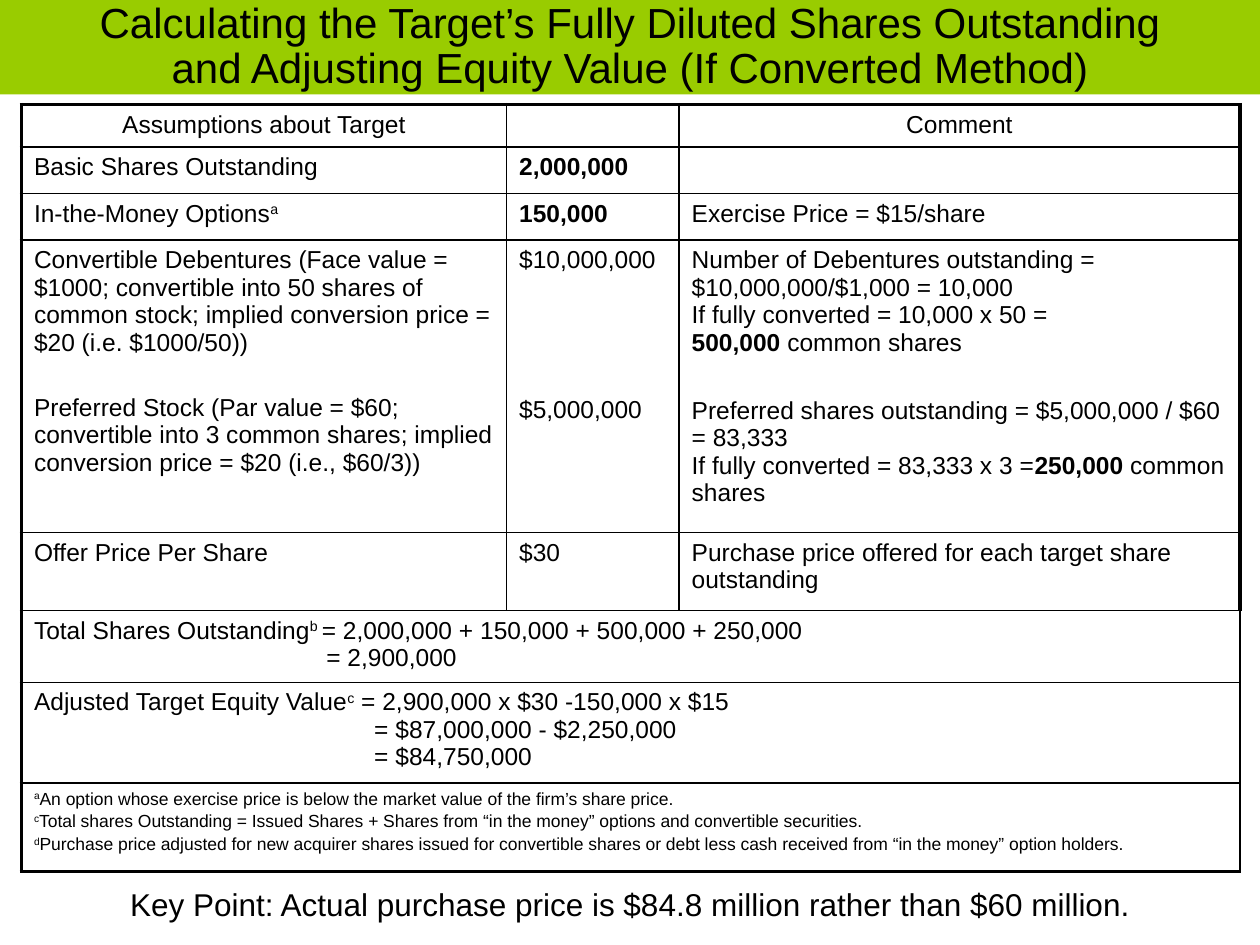
from lxml import etree
from pptx import Presentation
from pptx.dml.color import RGBColor
from pptx.enum.text import MSO_ANCHOR, MSO_AUTO_SIZE, PP_ALIGN
from pptx.oxml.ns import qn
from pptx.util import Inches, Pt

LEFT, CENTER = PP_ALIGN.LEFT, PP_ALIGN.CENTER
MIDDLE, NO_FIT = MSO_ANCHOR.MIDDLE, MSO_AUTO_SIZE.NONE
TITLE_ONLY = 5
COLORS = {"band": "99CC00", "ink": "000000"}
FONT = "Arial"
SIZES = {"title": 24, "key": 18, "body": 14, "note": 10}
THIN, THICK = 1, 2.25
COLUMNS = [3.85, 1.37, 4.45]
ROWS = [0.33, 0.37, 0.37, 2.32, 0.62, 0.57, 0.8, 0.7]


def bold(text):
    return text, {"bold": True}


def raised(text):
    return text, {"baseline": 30000}


def line(*spans, **settings):
    """Describe one paragraph: its spans and its settings."""
    return spans, settings


HEADINGS = [[line(text, alignment=CENTER)] for text in ("Assumptions about Target", "", "Comment")]
ASSUMPTIONS = [
    HEADINGS,
    [[line("Basic Shares Outstanding")], [line(bold("2,000,000"))], [line("")]],
    [[line("In-the-Money Options", raised("a"))], [line(bold("150,000"))],
     [line("Exercise Price = $15/share")]],
    [[line("Convertible Debentures (Face value = $1000; convertible into 50 shares of "
           "common stock; implied conversion price = $20 (i.e. $1000/50))"),
      line("Preferred Stock (Par value = $60; convertible into 3 common shares; implied "
           "conversion price = $20 (i.e., $60/3))", space_before=Pt(21.4))],
     [line("$10,000,000"), line("$5,000,000", space_before=Pt(70))],
     [line("Number of Debentures outstanding = $10,000,000/$1,000 = 10,000"),
      line("If fully converted = 10,000 x 50 ="),
      line(bold("500,000"), " common shares"),
      line("Preferred shares outstanding = $5,000,000 / $60 = 83,333", space_before=Pt(23)),
      line("If fully converted = 83,333 x 3 =", bold("250,000"), " common shares")]],
    [[line("Offer Price Per Share")], [line("$30")],
     [line("Purchase price offered for each target share outstanding")]],
]
RESULTS = [
    [line("Total Shares Outstanding", raised("b "), "= 2,000,000 + 150,000 + 500,000 + 250,000"),
     line("= 2,900,000", indent=2.32)],
    [line("Adjusted Target Equity Value", raised("c"), " = 2,900,000 x $30 -150,000 x $15"),
     line("= $87,000,000 - $2,250,000", indent=2.7),
     line("= $84,750,000", indent=2.7)],
]
NOTES = [line(raised(mark), text, space_before=Pt(1.8)) for mark, text in (
    ("a", "An option whose exercise price is below the market value of the firm’s share price."),
    ("c", "Total shares Outstanding = Issued Shares + Shares from “in the money” options and "
          "convertible securities."),
    ("d", "Purchase price adjusted for new acquirer shares issued for convertible shares or debt "
          "less cash received from “in the money” option holders."),
)]


class Page:
    """Holds the style and the current slide; places are shares of the slide's size."""

    def __init__(self, deck):
        self.deck = deck
        self.slide = deck.slides.add_slide(deck.slide_layouts[TITLE_ONLY])

    def place(self, left, top, width, height):
        across, down = self.deck.slide_width, self.deck.slide_height
        return [int(share * size) for share, size in
                zip((left, top, width, height), (across, down, across, down))]

    def add_lines(self, frame, lines, size):
        frame.word_wrap = True
        for index, (spans, settings) in enumerate(lines):
            para = frame.paragraphs[0] if index == 0 else frame.add_paragraph()
            values = {"alignment": LEFT, "space_before": Pt(0), **settings}
            indent = values.pop("indent", 0)
            for name, value in values.items():
                setattr(para, name, value)
            if indent:
                para._p.get_or_add_pPr().set("marL", str(Inches(indent)))
            for span in spans:
                text, look = span if isinstance(span, tuple) else (span, {})
                if text:
                    self.add_span(para, text, size, **look)
                else:
                    end = etree.SubElement(para._p, qn("a:endParaRPr"))
                    end.set("sz", str(size * 100))

    def add_span(self, para, text, size, bold=False, baseline=0):
        span = para.add_run()
        span.text = text
        style = {"name": FONT, "size": Pt(size), "bold": bold}
        for name, value in style.items():
            setattr(span.font, name, value)
        span.font.color.rgb = RGBColor.from_string(COLORS["ink"])
        if baseline:
            span._r.get_or_add_rPr().set("baseline", str(baseline))

    def title(self, lines, place):
        box = self.slide.shapes.title
        box.left, box.top, box.width, box.height = self.place(*place)
        box.fill.solid()
        box.fill.fore_color.rgb = RGBColor.from_string(COLORS["band"])
        frame = box.text_frame
        frame.auto_size, frame.vertical_anchor = NO_FIT, MIDDLE
        self.add_lines(frame, lines, SIZES["title"])

    def text(self, lines, place, size):
        box = self.slide.shapes.add_textbox(*self.place(*place))
        self.add_lines(box.text_frame, lines, size)

    def table(self, left, top, columns, rows):
        """Add a plain table with a thick frame and thin inner lines."""
        table = self.slide.shapes.add_table(
            len(rows), len(columns), Inches(left), Inches(top),
            Inches(sum(columns)), Inches(sum(rows))).table
        table.first_row = table.horz_banding = False
        for column, width in zip(table.columns, columns):
            column.width = Inches(width)
        for row, height in zip(table.rows, rows):
            row.height = Inches(height)
        for r in range(len(rows)):
            for c in range(len(columns)):
                cell = table.cell(r, c)
                cell.fill.background()
                self.border(cell, {"lnL": c == 0, "lnR": c == len(columns) - 1,
                                   "lnT": r == 0, "lnB": r == len(rows) - 1})
        return table

    def border(self, cell, sides):
        properties = cell._tc.get_or_add_tcPr()
        for index, (side, outer) in enumerate(sides.items()):
            edge = etree.Element(qn(f"a:{side}"), w=str(Pt(THICK if outer else THIN)))
            fill = etree.SubElement(edge, qn("a:solidFill"))
            etree.SubElement(fill, qn("a:srgbClr"), val=COLORS["ink"])
            properties.insert(index, edge)


def main():
    deck = Presentation()
    deck.slide_width, deck.slide_height = Inches(10), Inches(7.5)
    page = Page(deck)
    heading = ("Calculating the Target’s Fully Diluted Shares Outstanding",
               "and Adjusting Equity Value (If Converted Method)")
    page.title([line(text, alignment=CENTER, line_spacing=0.9) for text in heading],
               (0, 0, 1, 0.1))

    table = page.table(0.17, 0.83, COLUMNS, ROWS)
    for r, cells in enumerate(ASSUMPTIONS):
        for c, lines in enumerate(cells):
            page.add_lines(table.cell(r, c).text_frame, lines, SIZES["body"])
    wide_rows = [(lines, SIZES["body"]) for lines in RESULTS] + [(NOTES, SIZES["note"])]
    for r, (lines, size) in enumerate(wide_rows, start=len(ASSUMPTIONS)):
        first = table.cell(r, 0)
        first.merge(table.cell(r, len(COLUMNS) - 1))
        page.add_lines(first.text_frame, lines, size)

    key_point = "Key Point: Actual purchase price is $84.8 million rather than $60 million."
    page.text([line(key_point, alignment=CENTER)], (0.07, 0.93, 0.86, 0.05), SIZES["key"])
    deck.save("out.pptx")


if __name__ == "__main__":
    main()
